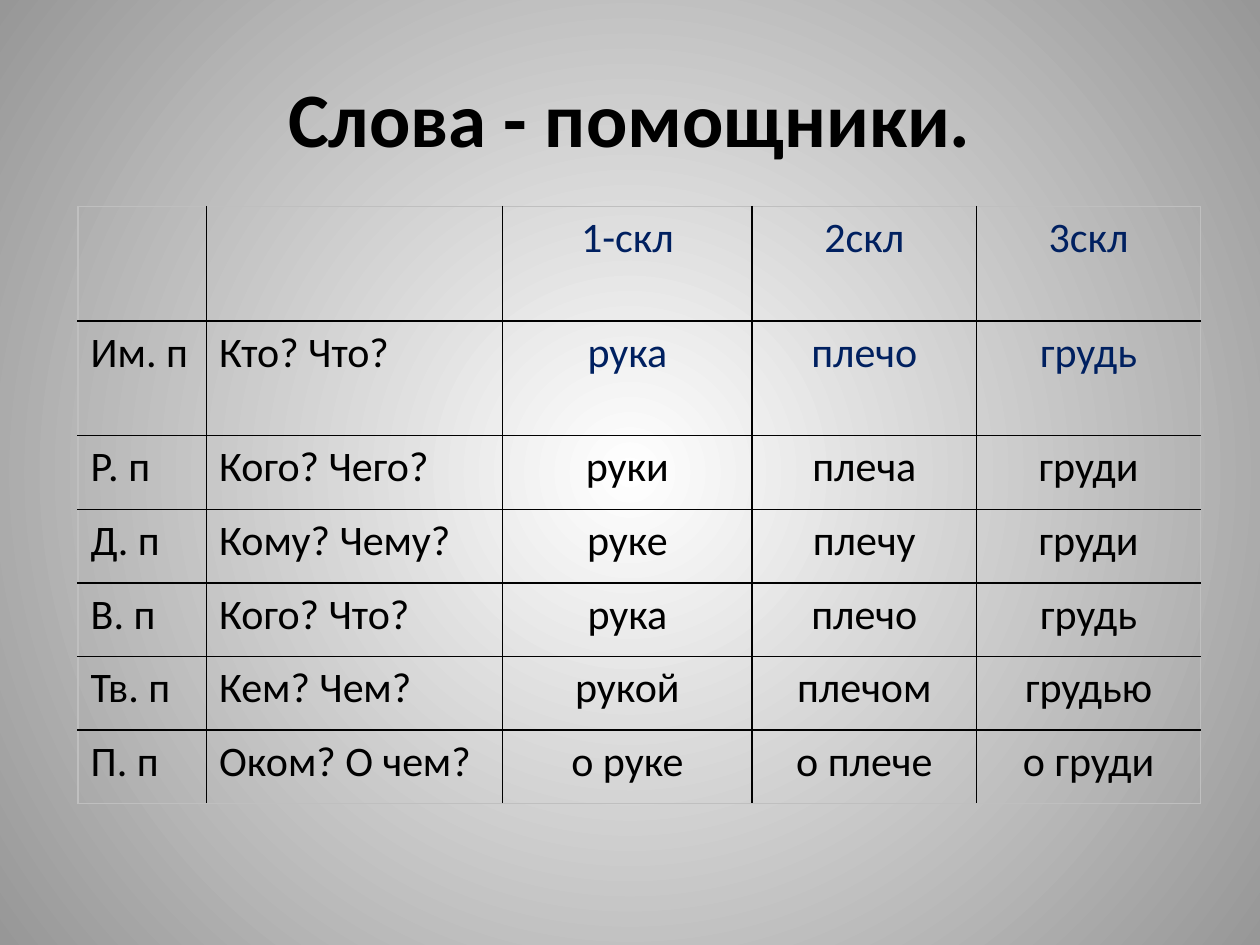
from dataclasses import dataclass

from lxml import etree
from pptx import Presentation
from pptx import util as u
from pptx.dml.color import RGBColor
from pptx.enum import text
from pptx.oxml.ns import qn


@dataclass(frozen=True)
class Theme:
    font: str = "Calibri"
    ink: str = "000000"
    accent: str = "002060"
    edge: str = "BFBFBF"
    center: str = "FFFFFF"
    rim: str = "979797"
    title: int = 44
    body: int = 24
    rule: int = 1


THEME = Theme()
TITLE = "Слова - помощники."
COLS = (1.02, 2.35, 1.98, 1.78, 1.78)
HEIGHTS = (0.91,) * 2 + (0.585,) * 5
ROWS = (
    ("", "", "1-скл", "2скл", "3скл"),
    ("Им. п", "Кто? Что?", "рука", "плечо", "грудь"),
    ("Р. п", "Кого? Чего?", "руки", "плеча", "груди"),
    ("Д. п", "Кому? Чему?", "руке", "плечу", "груди"),
    ("В. п", "Кого? Что?", "рука", "плечо", "грудь"),
    ("Тв. п", "Кем? Чем?", "рукой", "плечом", "грудью"),
    ("П. п", "Оком? О чем?", "о руке", "о плече", "о груди"),
)


def style(para, size, color, align, bold=False):
    para.alignment = align
    font = para.font
    font.name, font.size, font.bold = THEME.font, u.Pt(size), bold
    font.color.rgb = RGBColor.from_string(color)


def backdrop(slide):
    """Radial gradient, light in the middle."""
    fill = slide.background.fill
    fill.gradient()
    for stop, color in zip(fill.gradient_stops, (THEME.center, THEME.rim)):
        stop.color.rgb = RGBColor.from_string(color)
    grad = slide.element.find(".//" + qn("a:gradFill"))
    grad.remove(grad.find(qn("a:lin")))
    shade = etree.SubElement(grad, qn("a:path"), path="circle")
    etree.SubElement(shade, qn("a:fillToRect"),
                     {side: "50000" for side in "ltrb"})


def heading(slide, left, top, width, height):
    title = slide.shapes.title
    title.left, title.top = u.Inches(left), u.Inches(top)
    title.width, title.height = u.Inches(width), u.Inches(height)
    frame = title.text_frame
    frame.text = TITLE
    frame.vertical_anchor = text.MSO_ANCHOR.MIDDLE
    style(frame.paragraphs[0], THEME.title, THEME.ink,
          text.PP_ALIGN.CENTER, True)


def borders(cell, outer):
    """Black rules inside the grid, pale ones on its outer edge."""
    props = cell._tc.get_or_add_tcPr()
    for spot, (side, edge) in enumerate(zip("LRTB", outer)):
        line = etree.Element(qn("a:ln" + side), w=str(u.Pt(THEME.rule)))
        solid = etree.SubElement(line, qn("a:solidFill"))
        etree.SubElement(solid, qn("a:srgbClr"),
                         val=THEME.edge if edge else THEME.ink)
        props.insert(spot, line)


def cases(slide, left, top, width, height):
    """Table of cases; columns and rows share the box by their weights."""
    table = slide.shapes.add_table(
        len(ROWS), len(COLS), u.Inches(left), u.Inches(top),
        u.Inches(width), u.Inches(height)).table
    table.first_row = table.horz_banding = False
    for col, part in zip(table.columns, COLS):
        col.width = u.Inches(width * part / sum(COLS))
    for row, part in zip(table.rows, HEIGHTS):
        row.height = u.Inches(height * part / sum(HEIGHTS))
    for r, words in enumerate(ROWS):
        for c, word in enumerate(words):
            cell = table.cell(r, c)
            cell.text = word
            cell.fill.background()
            borders(cell, (c == 0, c == len(COLS) - 1,
                           r == 0, r == len(ROWS) - 1))
            form = c >= 2
            style(cell.text_frame.paragraphs[0], THEME.body,
                  THEME.accent if form and r < 2 else THEME.ink,
                  text.PP_ALIGN.CENTER if form else text.PP_ALIGN.LEFT)


def main():
    deck = Presentation()
    deck.slide_width, deck.slide_height = u.Inches(10), u.Inches(7.5)
    slide = deck.slides.add_slide(deck.slide_layouts.get_by_name("Title Only"))
    backdrop(slide)
    cases(slide, 0.62, 1.64, 8.91, 4.74)
    heading(slide, 0.5, 0.3, 9, 1.25)
    deck.save("out.pptx")


if __name__ == "__main__":
    main()
